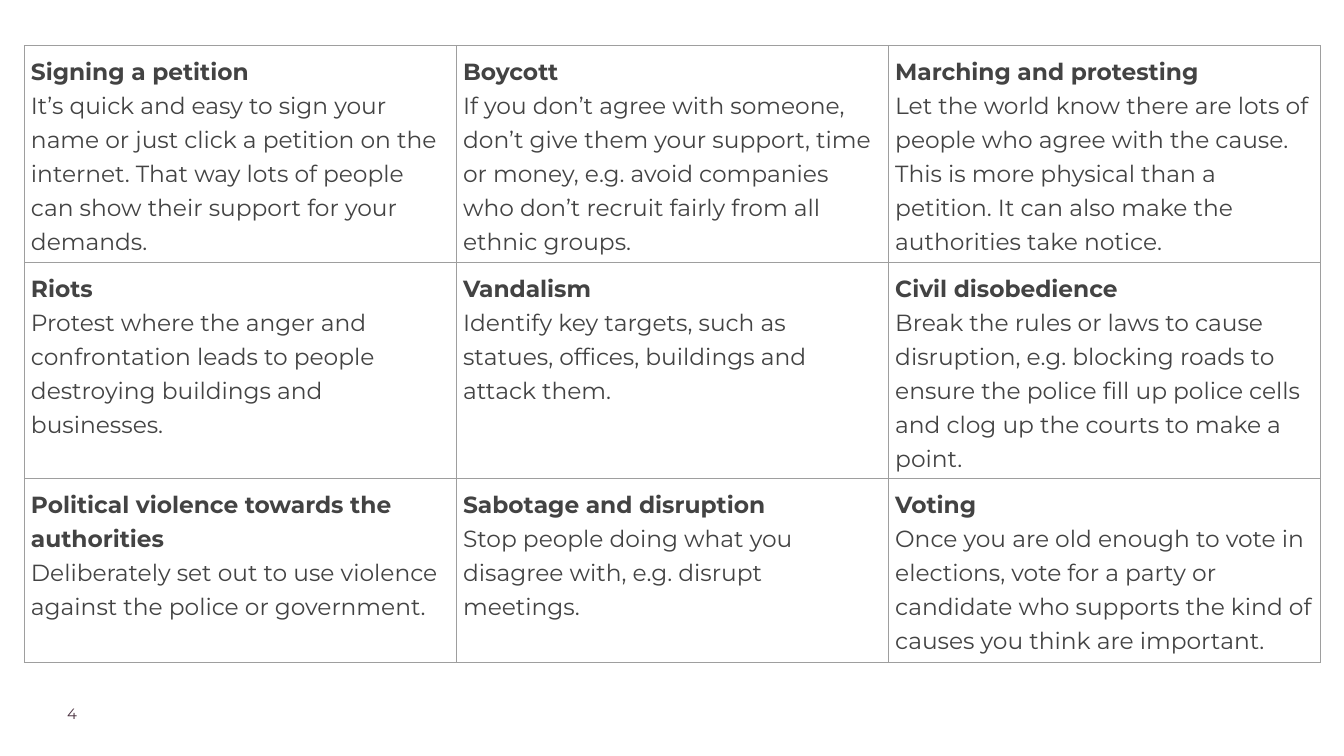
"""Build a slide with a three-by-three table of forms of political action."""
import dataclasses
import itertools

import lxml.etree
import pptx
import pptx.dml.color
import pptx.oxml.ns
import pptx.table
import pptx.text.text
import pptx.util

FONT = "Montserrat"
INK = "434343"
GRID = "9E9E9E"
PAGE_INK = "4B3241"
COLUMN_WIDTH = 463
ROW_HEIGHTS = (232, 232, 197)


@dataclasses.dataclass(frozen=True)
class Action:
    heading: str
    detail: str


ACTIONS = (
    (
        Action("Signing a petition",
               "It’s quick and easy to sign your name or just click a petition on the internet. "
               "That way lots of people can show their support for your demands."),
        Action("Boycott",
               "If you don’t agree with someone, don’t give them your support, time or money, "
               "e.g. avoid companies who don’t recruit fairly from all ethnic groups."),
        Action("Marching and protesting",
               "Let the world know there are lots of people who agree with the cause. This is more "
               "physical than a petition. It can also make the authorities take notice."),
    ),
    (
        Action("Riots",
               "Protest where the anger and confrontation leads to people destroying buildings "
               "and businesses."),
        Action("Vandalism",
               "Identify key targets, such as statues, offices, buildings and attack them."),
        Action("Civil disobedience",
               "Break the rules or laws to cause disruption, e.g. blocking roads to ensure the "
               "police fill up police cells and clog up the courts to make a point."),
    ),
    (
        Action("Political violence towards the authorities",
               "Deliberately set out to use violence against the police or government."),
        Action("Sabotage and disruption",
               "Stop people doing what you disagree with, e.g. disrupt meetings."),
        Action("Voting",
               "Once you are old enough to vote in elections, vote for a party or candidate who "
               "supports the kind of causes you think are important."),
    ),
)


def rgb(value: str) -> pptx.dml.color.RGBColor:
    return pptx.dml.color.RGBColor.from_string(value)


def add_run(paragraph: pptx.text.text._Paragraph, text: str, size: float,
            color: str, bold: bool = False) -> None:
    run = paragraph.add_run()
    run.text = text
    run.font.name = FONT
    run.font.size = pptx.util.Pt(size)
    run.font.bold = bold
    run.font.color.rgb = rgb(color)


def add_borders(cell: pptx.table._Cell) -> None:
    qn = pptx.oxml.ns.qn
    properties = cell._tc.get_or_add_tcPr()
    for side in ("lnL", "lnR", "lnT", "lnB"):
        line = lxml.etree.SubElement(properties, qn(f"a:{side}"), w=str(pptx.util.Pt(0.75)))
        fill = lxml.etree.SubElement(line, qn("a:solidFill"))
        lxml.etree.SubElement(fill, qn("a:srgbClr"), val=GRID)


def fill_cell(cell: pptx.table._Cell, action: Action) -> None:
    add_borders(cell)
    cell.fill.background()
    margin = pptx.util.Pt(7.2)
    cell.margin_left = cell.margin_right = cell.margin_top = cell.margin_bottom = margin
    heading = cell.text_frame.paragraphs[0]
    detail = cell.text_frame.add_paragraph()
    heading.line_spacing = detail.line_spacing = 1.2
    add_run(heading, action.heading, 25, INK, bold=True)
    add_run(detail, action.detail, 25, INK)


def main() -> None:
    deck = pptx.Presentation()
    deck.slide_width = pptx.util.Pt(1440)
    deck.slide_height = pptx.util.Pt(810)
    slide = deck.slides.add_slide(deck.slide_layouts[6])

    page_number = slide.shapes.add_textbox(
        pptx.util.Pt(72), pptx.util.Pt(754.5), pptx.util.Pt(113), pptx.util.Pt(28)).text_frame
    page_number.word_wrap = True
    page_number.margin_left = page_number.margin_right = 0
    page_number.margin_top = page_number.margin_bottom = 0
    add_run(page_number.paragraphs[0], "4", 16, PAGE_INK)

    action_grid = slide.shapes.add_table(
        3, 3, pptx.util.Pt(26), pptx.util.Pt(49),
        pptx.util.Pt(3 * COLUMN_WIDTH), pptx.util.Pt(sum(ROW_HEIGHTS))).table
    action_grid.first_row = action_grid.horz_banding = False
    for column in action_grid.columns:
        column.width = pptx.util.Pt(COLUMN_WIDTH)
    for row, height in zip(action_grid.rows, ROW_HEIGHTS):
        row.height = pptx.util.Pt(height)
    for cell, action in zip(action_grid.iter_cells(), itertools.chain.from_iterable(ACTIONS)):
        fill_cell(cell, action)

    deck.save("out.pptx")


if __name__ == "__main__":
    main()
